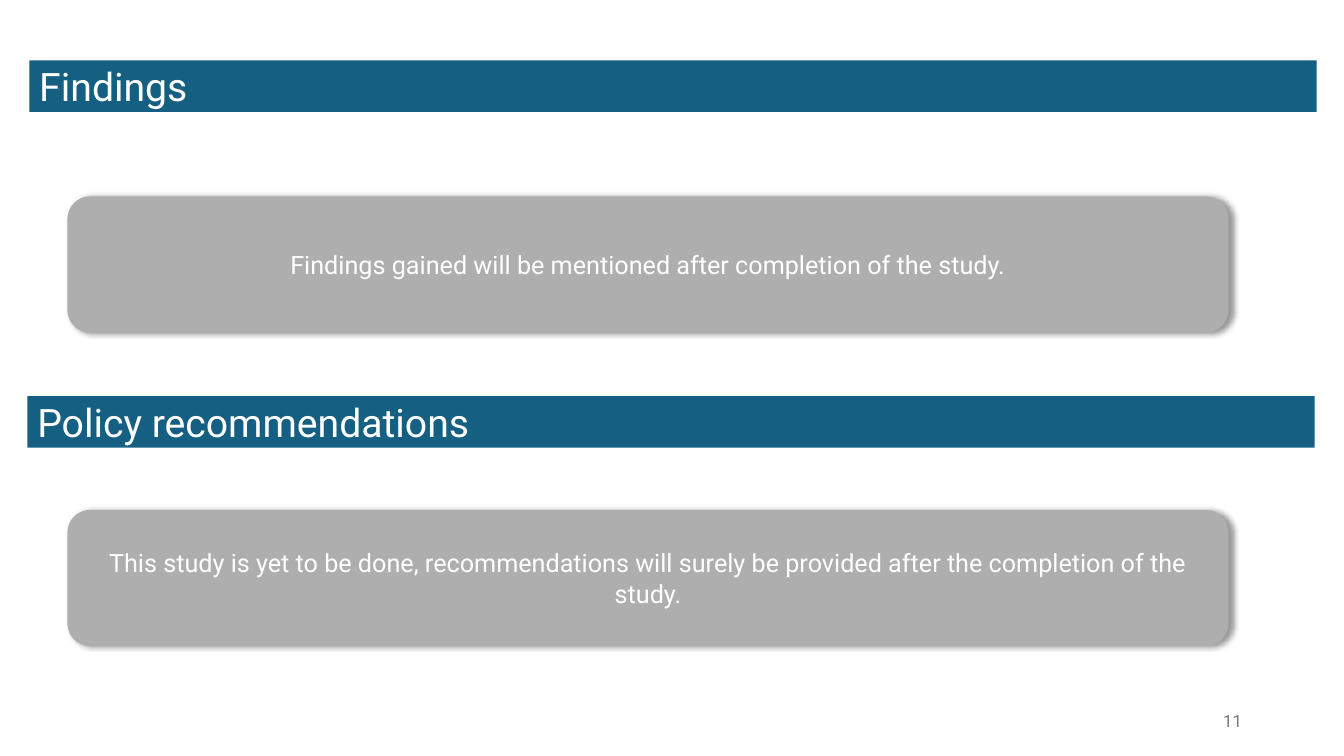
"""Build the findings and policy recommendations slide."""
from dataclasses import dataclass

from lxml.etree import SubElement
from pptx import Presentation
from pptx.dml.color import RGBColor
from pptx.enum.shapes import MSO_SHAPE
from pptx.enum.text import MSO_ANCHOR, PP_ALIGN
from pptx.oxml.ns import qn
from pptx.shapes.autoshape import Shape
from pptx.slide import Slide
from pptx.util import Cm, Pt

COLORS = {
    "bar": "156082",
    "card": "AEAEAE",
    "light": "FFFFFF",
    "number": "797979",
    "shadow": "000000",
}
BAR_WIDTH, BAR_HEIGHT = 32.44, 1.3
CARD_LEFT, CARD_WIDTH, CARD_HEIGHT = 1.7, 29.26, 3.43
BAR_PARAGRAPH = {
    "alignment": PP_ALIGN.LEFT,
    "space_before": Pt(6),
    "space_after": Pt(6),
}
CARD_PARAGRAPH = {"alignment": PP_ALIGN.CENTER}
NUMBER_PARAGRAPH = {"alignment": PP_ALIGN.RIGHT}


@dataclass(frozen=True)
class Section:
    heading: str
    message: str
    bar_left: float
    bar_top: float
    card_top: float


SECTIONS = [
    Section(
        "Findings",
        "Findings gained will be mentioned after completion of the study.",
        0.74, 1.52, 4.95,
    ),
    Section(
        "Policy recommendations",
        "This study is yet to be done, recommendations will surely be "
        "provided after the completion of the study.",
        0.69, 9.98, 12.85,
    ),
]


def write_text(shape: Shape, text: str, size: int, color: str, formats: dict) -> None:
    text_frame = shape.text_frame
    text_frame.word_wrap = True
    text_frame.vertical_anchor = MSO_ANCHOR.MIDDLE
    paragraph = text_frame.paragraphs[0]
    for name, value in formats.items():
        setattr(paragraph, name, value)
    run = paragraph.add_run()
    run.text = text
    for name, value in {"name": "Roboto", "size": Pt(size)}.items():
        setattr(run.font, name, value)
    run.font.color.rgb = RGBColor.from_string(COLORS[color])


def add_panel(
    slide: Slide, kind: MSO_SHAPE, left: float, top: float,
    width: float, height: float, fill: str,
) -> Shape:
    shape = slide.shapes.add_shape(kind, Cm(left), Cm(top), Cm(width), Cm(height))
    shape.shadow.inherit = False
    shape.fill.solid()
    shape.fill.fore_color.rgb = RGBColor.from_string(COLORS[fill])
    shape.line.fill.background()
    return shape


def add_shadow(shape: Shape) -> None:
    effects = shape.element.spPr.find(qn("a:effectLst"))
    shadow = SubElement(
        effects, qn("a:outerShdw"), blurRad=str(Pt(4)), dist=str(Pt(3)),
        dir="0", algn="l", rotWithShape="0",
    )
    color = SubElement(shadow, qn("a:srgbClr"), val=COLORS["shadow"])
    SubElement(color, qn("a:alpha"), val="40000")


def add_bar(slide: Slide, section: Section) -> None:
    bar = add_panel(
        slide, MSO_SHAPE.RECTANGLE, section.bar_left, section.bar_top,
        BAR_WIDTH, BAR_HEIGHT, "bar",
    )
    write_text(bar, section.heading, 28, "light", BAR_PARAGRAPH)


def add_card(slide: Slide, section: Section) -> None:
    card = add_panel(
        slide, MSO_SHAPE.ROUNDED_RECTANGLE, CARD_LEFT, section.card_top,
        CARD_WIDTH, CARD_HEIGHT, "card",
    )
    add_shadow(card)
    write_text(card, section.message, 18, "light", CARD_PARAGRAPH)


def main() -> None:
    presentation = Presentation()
    presentation.slide_width = Cm(33.87)
    presentation.slide_height = Cm(19.05)
    slide = presentation.slides.add_slide(presentation.slide_layouts[6])
    number = slide.shapes.add_textbox(Cm(23.93), Cm(17.65), Cm(7.62), Cm(1.02))
    write_text(number, "11", 12, "number", NUMBER_PARAGRAPH)
    for section in SECTIONS:
        add_bar(slide, section)
        add_card(slide, section)
    presentation.save("out.pptx")


if __name__ == "__main__":
    main()
